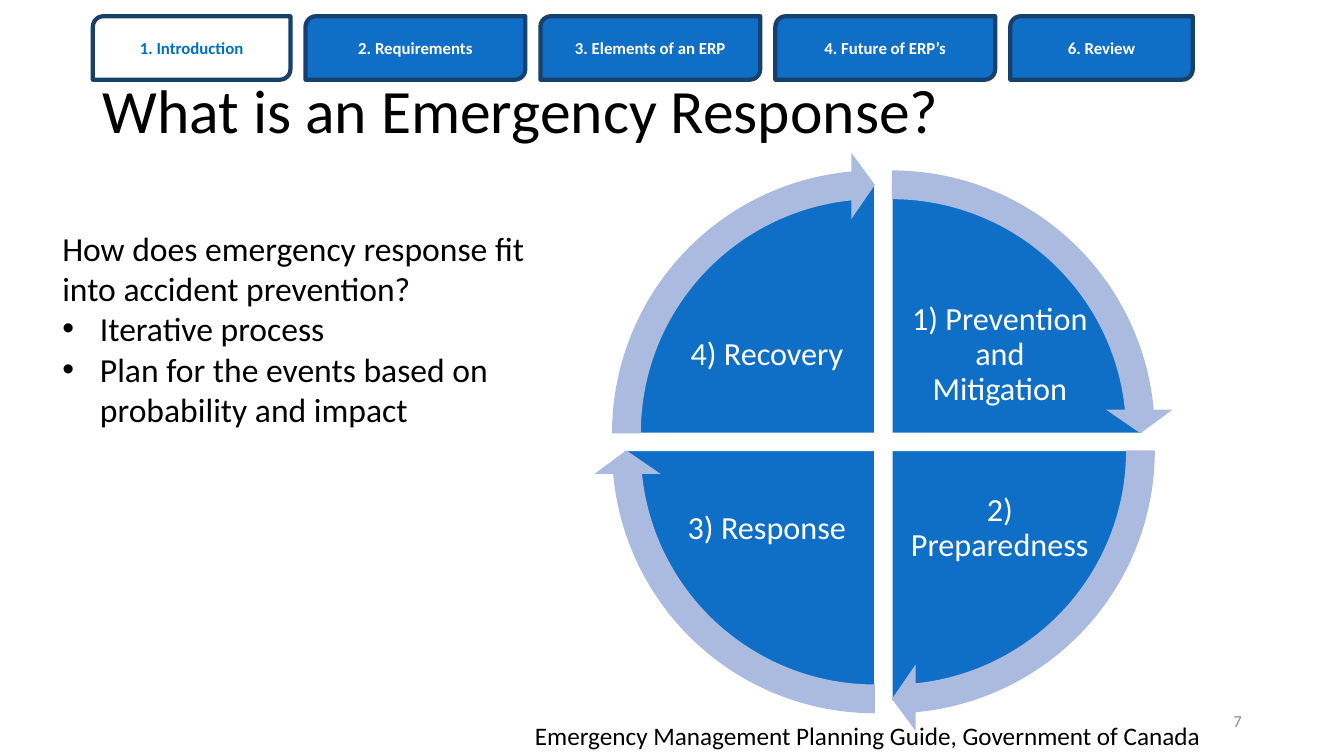
"""Build the emergency response slide: section tabs, bullet text and a four-phase cycle."""
from lxml.etree import SubElement
from pptx import Presentation
from pptx.dml.color import RGBColor
from pptx.enum.shapes import MSO_SHAPE as Preset
from pptx.enum.text import MSO_ANCHOR as Anchor, PP_ALIGN as Align
from pptx.oxml.ns import qn
from pptx.util import Cm, Pt

COLORS = {
    "black": "000000", "white": "FFFFFF", "gray": "8C8C8C", "blue": "0F6FC6",
    "navy": "17406D", "active": "0070C0", "arrow": "ABBBDF",
}

deck = Presentation()
deck.slide_width, deck.slide_height = Cm(33.87), Cm(19.05)
page = deck.slides.add_slide(deck.slide_layouts[6])


def add_preset(preset, left, top, width, height, fill, line=None, weight=1):
    shape = page.shapes.add_shape(preset, Cm(left), Cm(top), Cm(width), Cm(height))
    shape.shadow.inherit = False
    shape.fill.solid()
    shape.fill.fore_color.rgb = RGBColor.from_string(COLORS[fill])
    if line:
        shape.line.color.rgb = RGBColor.from_string(COLORS[line])
        shape.line.width = Pt(weight)
    else:
        shape.line.fill.background()
    return shape


def write(box, lines, size, color, align=Align.LEFT, anchor=Anchor.MIDDLE):
    frame = box.text_frame
    frame.word_wrap = True
    frame.vertical_anchor = anchor
    frame.text = "\n".join(lines)
    for para in frame.paragraphs:
        para.alignment = align
        para.font.name = "Calibri"
        para.font.size = Pt(size)
        para.font.color.rgb = RGBColor.from_string(COLORS[color])
    return frame


title = page.shapes.add_textbox(Cm(2.34), Cm(1.02), Cm(29.21), Cm(3.68))
write(title, ["What is an Emergency Response?"], 44, "black").paragraphs[0].line_spacing = 0.9

number = page.shapes.add_textbox(Cm(23.93), Cm(17.65), Cm(7.62), Cm(1.02))
write(number, ["7"], 12, "gray", Align.RIGHT)

body = page.shapes.add_textbox(Cm(1.32), Cm(5.61), Cm(13.18), Cm(8.46))
body_lines = [
    "How does emergency response fit into accident prevention?",
    "Iterative process",
    "Plan for the events based on probability and impact",
]
body_frame = write(body, body_lines, 24, "black", anchor=Anchor.TOP)
for para in body_frame.paragraphs[1:]:
    properties = para._p.get_or_add_pPr()
    properties.set("marL", str(Cm(0.95)))
    properties.set("indent", str(-Cm(0.95)))
    bullet_font = properties.makeelement(qn("a:buFont"), {"typeface": "Arial"})
    properties.insert_element_before(bullet_font, "a:buChar", "a:defRPr")
    bullet = properties.makeelement(qn("a:buChar"), {"char": "•"})
    properties.insert_element_before(bullet, "a:defRPr")

tabs = [
    ("1. Introduction", 4.98, "white", "active"),
    ("2. Requirements", 5.54, "blue", "white"),
    ("3. Elements of an ERP", 5.54, "blue", "white"),
    ("4. Future of ERP’s", 5.54, "blue", "white"),
    ("6. Review", 4.6, "blue", "white"),
]
tab_left, tab_gap = 2.34, 0.38
for label, width, fill, color in tabs:
    tab = add_preset(Preset.ROUND_2_DIAG_RECTANGLE, tab_left, 0.41, width, 1.6, fill, "navy", 3)
    write(tab, [label], 12, color, Align.CENTER).paragraphs[0].font.bold = True
    tab_left += width + tab_gap

phases = [
    ("1) Prevention and Mitigation", 1, -1, 162),
    ("2) Preparedness", 1, 1, 0),
    ("3) Response", -1, 1, 54),
    ("4) Recovery", -1, -1, 108),
]
center_x, center_y, offset = 22.265, 11.135, 0.215
pie_size, arrow_size = 12.65, 14.2
label_width, label_height = 4.67, 3.45
for label, side_x, side_y, start in phases:
    pie = add_preset(
        Preset.PIE,
        center_x + side_x * offset - pie_size / 2,
        center_y + side_y * offset - pie_size / 2,
        pie_size, pie_size, "blue", "white",
    )
    pie.adjustments[0], pie.adjustments[1] = start, (start + 54) % 216
    box = page.shapes.add_textbox(
        Cm(center_x + side_x * 2.935 - label_width / 2),
        Cm(center_y + side_y * 2.19 - label_height / 2),
        Cm(label_width), Cm(label_height),
    )
    frame = write(box, [label], 23, "white", Align.CENTER)
    frame.margin_left = frame.margin_right = frame.margin_top = frame.margin_bottom = Cm(0.08)
    frame.paragraphs[0].line_spacing = 0.9

for label, side_x, side_y, start in phases:
    arrow = add_preset(
        Preset.CIRCULAR_ARROW,
        center_x + side_x * offset - arrow_size / 2,
        center_y + side_y * offset - arrow_size / 2,
        arrow_size, arrow_size, "arrow",
    )
    for index, value in enumerate([0.051, 3.275, start + 50.725, start, 0.059]):
        arrow.adjustments[index] = value

credit = page.shapes.add_textbox(Cm(13.23), Cm(18.03), Cm(17.75), Cm(1.02))
credit_lines = ["Emergency Management Planning Guide, Government of Canada"]
write(credit, credit_lines, 18, "black", anchor=Anchor.TOP)

deck.save("out.pptx")
